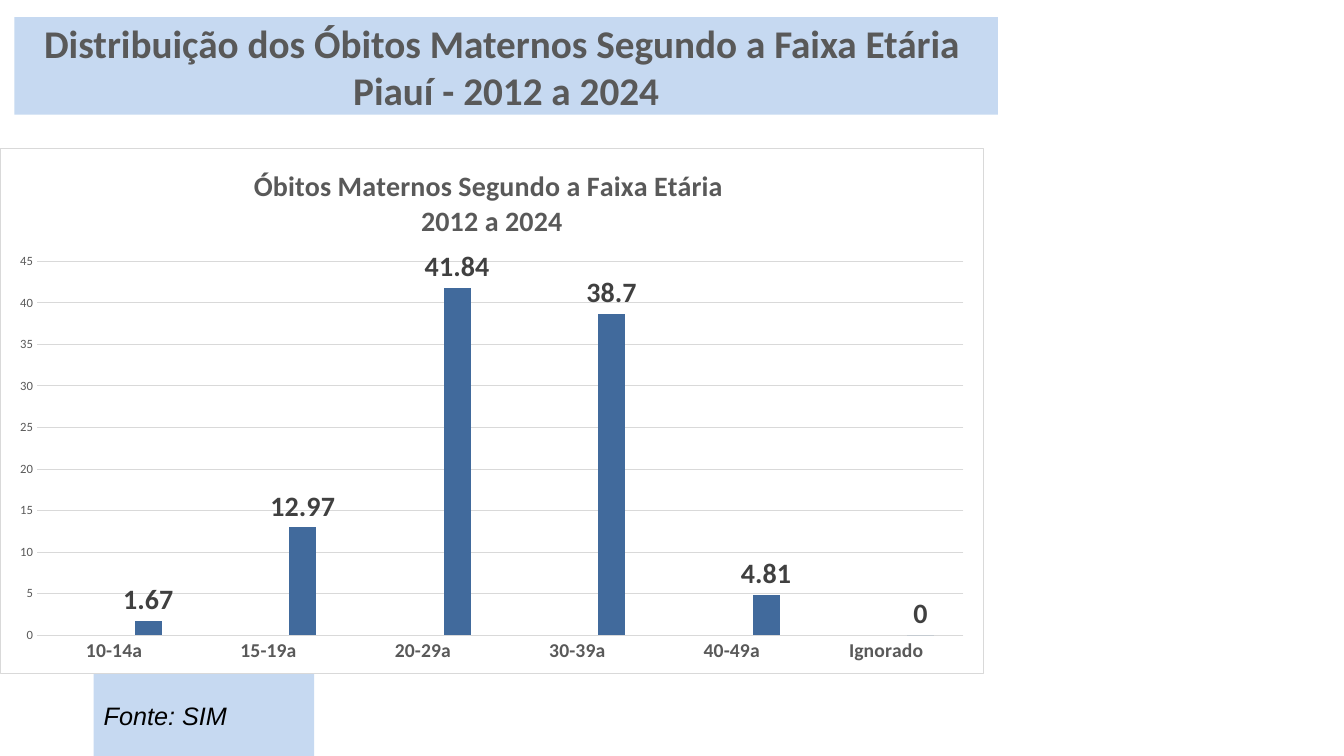
import dataclasses

import pptx
import pptx.chart.data
import pptx.dml.color
import pptx.enum.chart
import pptx.enum.text
import pptx.oxml
import pptx.oxml.ns
import pptx.util

Cm = pptx.util.Cm
Pt = pptx.util.Pt
Align = pptx.enum.text.PP_ALIGN


@dataclasses.dataclass(frozen=True)
class Theme:
    band: str = "C6D9F1"
    paper: str = "FFFFFF"
    black: str = "000000"
    gray: str = "595959"
    dark: str = "404040"
    rule: str = "D9D9D9"
    bars: tuple = ("AABAD7", "4F81BD", "416A9C")
    face: str = "Calibri"
    plain: str = "Arial"
    head: int = 28
    large: int = 20
    note: int = 18
    label: int = 14
    base: int = 10
    small: int = 9
    line: float = 0.75


THEME = Theme()
AGES = ("10-14a", "15-19a", "20-29a", "30-39a", "40-49a", "Ignorado")
SHARES = (1.67, 12.97, 41.84, 38.7, 4.81, 0)


def rgb(code):
    return pptx.dml.color.RGBColor.from_string(code)


def style(font, size, color, face=THEME.face, bold=False, italic=False):
    font.size = Pt(size)
    font.name = face
    font.bold = bold
    font.italic = italic
    font.color.rgb = rgb(color)


def place(shape, box):
    """Move a placeholder to its box and give it the pale blue band."""
    shape.left, shape.top, shape.width, shape.height = (Cm(n) for n in box)
    shape.fill.solid()
    shape.fill.fore_color.rgb = rgb(THEME.band)
    frame = shape.text_frame
    frame.word_wrap = True
    frame.auto_size = pptx.enum.text.MSO_AUTO_SIZE.NONE
    frame.vertical_anchor = pptx.enum.text.MSO_ANCHOR.MIDDLE
    return frame


def add_head(slide, box):
    frame = place(slide.shapes.title, box)
    frame.margin_top = frame.margin_bottom = 0
    frame.text = ("Distribuição dos Óbitos Maternos Segundo a Faixa Etária \n"
                  "Piauí - 2012 a 2024")
    for para in frame.paragraphs:
        para.alignment = Align.CENTER
        style(para.font, THEME.head, THEME.gray, bold=True)


def add_note(slide, box):
    frame = place(slide.placeholders[1], box)
    frame.text = "Fonte: SIM"
    para = frame.paragraphs[0]
    para.alignment = Align.JUSTIFY
    para.space_before = Pt(0)
    style(para.font, THEME.note, THEME.black, THEME.plain, italic=True)
    props = para._p.get_or_add_pPr()
    props.set("marL", "0")
    props.set("indent", "0")
    bullet = pptx.oxml.parse_xml(
        f'<a:buNone {pptx.oxml.ns.nsdecls("a")}/>')
    props.find(pptx.oxml.ns.qn("a:defRPr")).addprevious(bullet)


def set_line(line):
    line.color.rgb = rgb(THEME.rule)
    line.width = Pt(THEME.line)


def set_frame(chart):
    """Fill and outline the whole chart area."""
    area = pptx.oxml.parse_xml(
        f'<c:spPr {pptx.oxml.ns.nsdecls("c", "a")}>'
        f'<a:solidFill><a:srgbClr val="{THEME.paper}"/></a:solidFill>'
        f'<a:ln w="{Pt(THEME.line)}"><a:solidFill>'
        f'<a:srgbClr val="{THEME.rule}"/></a:solidFill></a:ln></c:spPr>')
    chart.element.find(pptx.oxml.ns.qn("c:txPr")).addprevious(area)


def set_axes(chart):
    none = pptx.enum.chart.XL_TICK_MARK.NONE
    ages, scale = chart.category_axis, chart.value_axis
    for axis in (ages, scale):
        axis.major_tick_mark = axis.minor_tick_mark = none
    style(ages.tick_labels.font, THEME.label, THEME.gray, bold=True)
    style(scale.tick_labels.font, THEME.small, THEME.gray)
    set_line(ages.format.line)
    scale.format.line.fill.background()
    scale.has_major_gridlines = True
    set_line(scale.major_gridlines.format.line)


def set_bars(plot):
    plot.gap_width = 219
    plot.overlap = -27
    plot.vary_by_categories = False
    for group, color in zip(plot.series, THEME.bars):
        group.format.fill.solid()
        group.format.fill.fore_color.rgb = rgb(color)
        group.invert_if_negative = False
    labels = plot.series[-1].data_labels
    labels.show_value = True
    labels.position = pptx.enum.chart.XL_LABEL_POSITION.OUTSIDE_END
    labels.number_format = "General"
    labels.number_format_is_linked = False
    style(labels.font, THEME.large, THEME.dark, bold=True)


def add_bars(slide, box):
    data = pptx.chart.data.CategoryChartData()
    data.categories = AGES
    blank = (None,) * len(AGES)
    for index, values in enumerate((blank, blank, SHARES), 1):
        data.add_series(f"Series {index}", values)
    kind = pptx.enum.chart.XL_CHART_TYPE.COLUMN_CLUSTERED
    chart = slide.shapes.add_chart(kind, *(Cm(n) for n in box), data).chart
    style(chart.font, THEME.base, THEME.black)
    set_frame(chart)
    chart.has_legend = False
    chart.has_title = True
    title = chart.chart_title
    title.include_in_layout = False
    title.text_frame.text = ("Óbitos Maternos Segundo a Faixa Etária \n"
                             "2012 a 2024")
    for para in title.text_frame.paragraphs:
        style(para.font, THEME.large, THEME.gray, bold=True)
    set_axes(chart)
    set_bars(chart.plots[0])


def main():
    deck = pptx.Presentation()
    deck.slide_width, deck.slide_height = Cm(33.87), Cm(19.05)
    slide = deck.slides.add_slide(deck.slide_layouts[1])
    add_head(slide, (0.36, 0.43, 24.79, 2.46))
    add_note(slide, (2.36, 16.99, 5.56, 2.06))
    add_bars(slide, (0, 3.73, 24.79, 13.26))
    deck.save("out.pptx")


if __name__ == "__main__":
    main()
